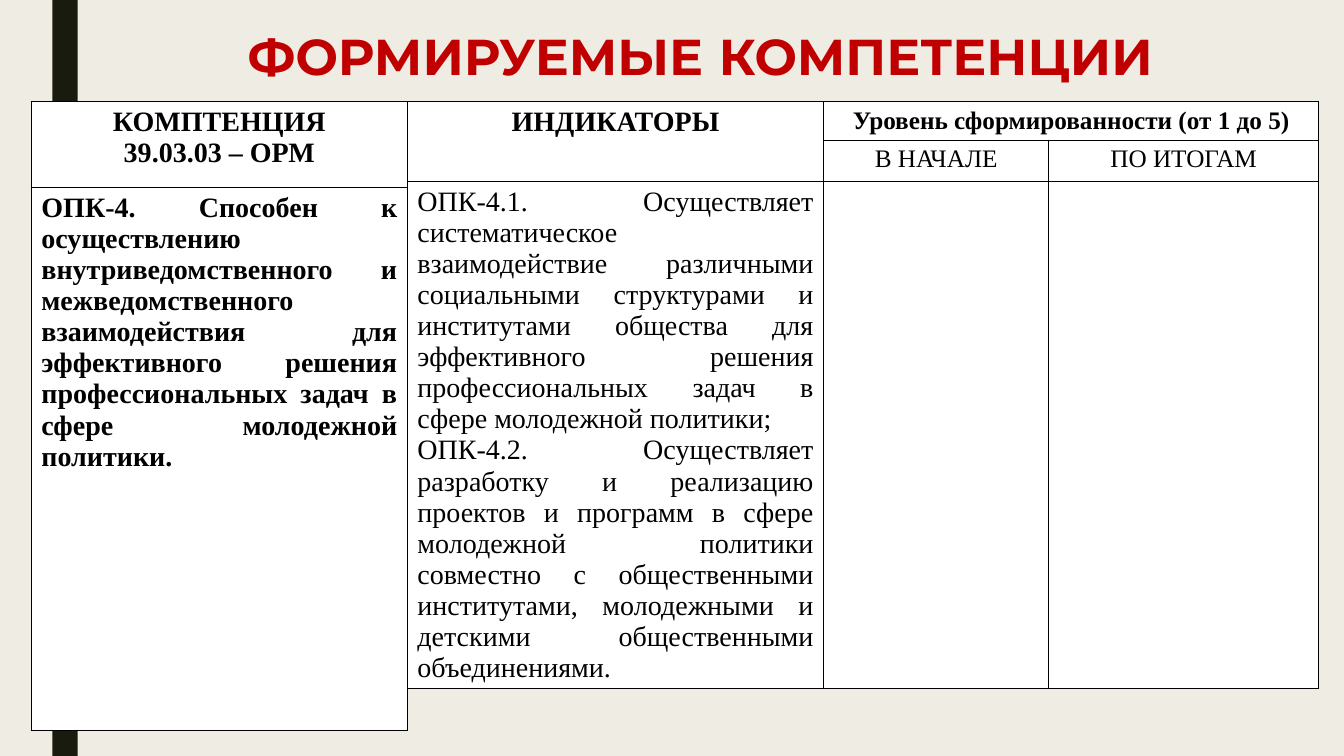
from dataclasses import dataclass

from lxml import etree
from pptx import Presentation, util as u
from pptx.dml.color import RGBColor
from pptx.enum import shapes, text
from pptx.oxml import ns

CENTER = text.PP_ALIGN.CENTER
JUSTIFY = text.PP_ALIGN.JUSTIFY


@dataclass(frozen=True)
class Theme:
    paper: str = "EFEDE3"
    stripe: str = "191B0E"
    heading: str = "C00000"
    ink: str = "000000"
    cell: str = "FFFFFF"
    heading_font: str = "Montserrat"
    table_font: str = "Times New Roman"
    heading_size: float = 36
    gap_size: float = 39.6
    large: float = 20
    small: float = 18
    border: float = 1


@dataclass(frozen=True)
class Entry:
    row: int
    column: int
    lines: tuple[str, ...]
    size: float
    bold: bool = False
    align: text.PP_ALIGN = CENTER
    rows: int = 1
    columns: int = 1


@dataclass(frozen=True)
class Grid:
    left: float
    top: float
    widths: tuple[float, ...]
    heights: tuple[float, ...]
    entries: tuple[Entry, ...]


THEME = Theme()
WIDTH, HEIGHT = u.Inches(13.33), u.Inches(7.5)

COMPETENCE = Grid(2.33, 13.47, (27.98,), (11.33, 71.87), (
    Entry(0, 0, ("КОМПТЕНЦИЯ", "39.03.03 – ОРМ"), THEME.large, True),
    Entry(1, 0, (
        "ОПК-4. Способен к осуществлению внутриведомственного и "
        "межведомственного взаимодействия для эффективного решения "
        "профессиональных задач в сфере молодежной политики.",
    ), THEME.large, True, JUSTIFY),
))

INDICATORS = Grid(30.31, 13.47, (30.98, 16.73, 20.11), (5.07, 5.4, 67.07), (
    Entry(0, 0, ("ИНДИКАТОРЫ",), THEME.large, True, rows=2),
    Entry(0, 1, ("Уровень сформированности (от 1 до 5)",), THEME.small, True, columns=2),
    Entry(1, 1, ("В НАЧАЛЕ",), THEME.small),
    Entry(1, 2, ("ПО ИТОГАМ",), THEME.small),
    Entry(2, 0, (
        "ОПК-4.1. Осуществляет систематическое взаимодействие различными "
        "социальными структурами и институтами общества для эффективного "
        "решения профессиональных задач в сфере молодежной политики;",
        "ОПК-4.2. Осуществляет разработку и реализацию проектов и программ "
        "в сфере молодежной политики совместно с общественными институтами, "
        "молодежными и детскими общественными объединениями.",
    ), THEME.large, align=JUSTIFY),
))


def across(percent: float) -> int:
    return round(WIDTH * percent / 100)


def down(percent: float) -> int:
    return round(HEIGHT * percent / 100)


def color(value: str) -> RGBColor:
    return RGBColor.from_string(value)


def add_run(paragraph, words: str, font: str, size: float, ink: str, bold: bool) -> None:
    run = paragraph.add_run()
    run.text = words
    run.font.name = font
    run.font.size = u.Pt(size)
    run.font.bold = bold
    run.font.color.rgb = color(ink)


def add_heading(slide) -> None:
    heading = slide.shapes.title
    heading.left, heading.top = across(8.25), down(3.87)
    heading.width, heading.height = across(87.7), down(7.6)
    frame = heading.text_frame
    frame.auto_size = text.MSO_AUTO_SIZE.NONE
    frame.vertical_anchor = text.MSO_ANCHOR.MIDDLE
    line = frame.paragraphs[0]
    line.alignment = CENTER
    line.line_spacing = 0.89
    for words, size in (("ФОРМИРУЕМЫЕ", THEME.heading_size), (" ", THEME.gap_size),
                        ("КОМПЕТЕНЦИИ", THEME.heading_size)):
        add_run(line, words, THEME.heading_font, size, THEME.heading, True)


def add_stripe(slide) -> None:
    stripe = slide.shapes.add_shape(
        shapes.MSO_SHAPE.RECTANGLE, across(3.9), 0, across(1.88), HEIGHT)
    stripe.shadow.inherit = False
    stripe.fill.solid()
    stripe.fill.fore_color.rgb = color(THEME.stripe)
    stripe.line.fill.background()


def style_cell(cell) -> None:
    properties = cell._tc.get_or_add_tcPr()
    for side in ("a:lnL", "a:lnR", "a:lnT", "a:lnB"):
        edge = etree.SubElement(properties, ns.qn(side), w=str(u.Pt(THEME.border)))
        fill = etree.SubElement(edge, ns.qn("a:solidFill"))
        etree.SubElement(fill, ns.qn("a:srgbClr"), val=THEME.ink)
    cell.fill.solid()
    cell.fill.fore_color.rgb = color(THEME.cell)


def add_grid(slide, grid: Grid) -> None:
    table = slide.shapes.add_table(
        len(grid.heights), len(grid.widths), across(grid.left), down(grid.top),
        across(sum(grid.widths)), down(sum(grid.heights))).table
    table.first_row = table.horz_banding = False
    for column, width in zip(table.columns, grid.widths):
        column.width = across(width)
    for row, height in zip(table.rows, grid.heights):
        row.height = down(height)
    for cell in table.iter_cells():
        style_cell(cell)
    for entry in grid.entries:
        cell = table.cell(entry.row, entry.column)
        if entry.rows * entry.columns > 1:
            cell.merge(table.cell(entry.row + entry.rows - 1,
                                  entry.column + entry.columns - 1))
        frame = cell.text_frame
        for index, words in enumerate(entry.lines):
            paragraph = frame.add_paragraph() if index else frame.paragraphs[0]
            paragraph.alignment = entry.align
            add_run(paragraph, words, THEME.table_font, entry.size, THEME.ink, entry.bold)


def main() -> None:
    deck = Presentation()
    deck.slide_width, deck.slide_height = WIDTH, HEIGHT
    slide = deck.slides.add_slide(deck.slide_layouts.get_by_name("Title Only"))
    slide.background.fill.solid()
    slide.background.fill.fore_color.rgb = color(THEME.paper)
    add_heading(slide)
    add_stripe(slide)
    for grid in (COMPETENCE, INDICATORS):
        add_grid(slide, grid)
    deck.save("out.pptx")


if __name__ == "__main__":
    main()
